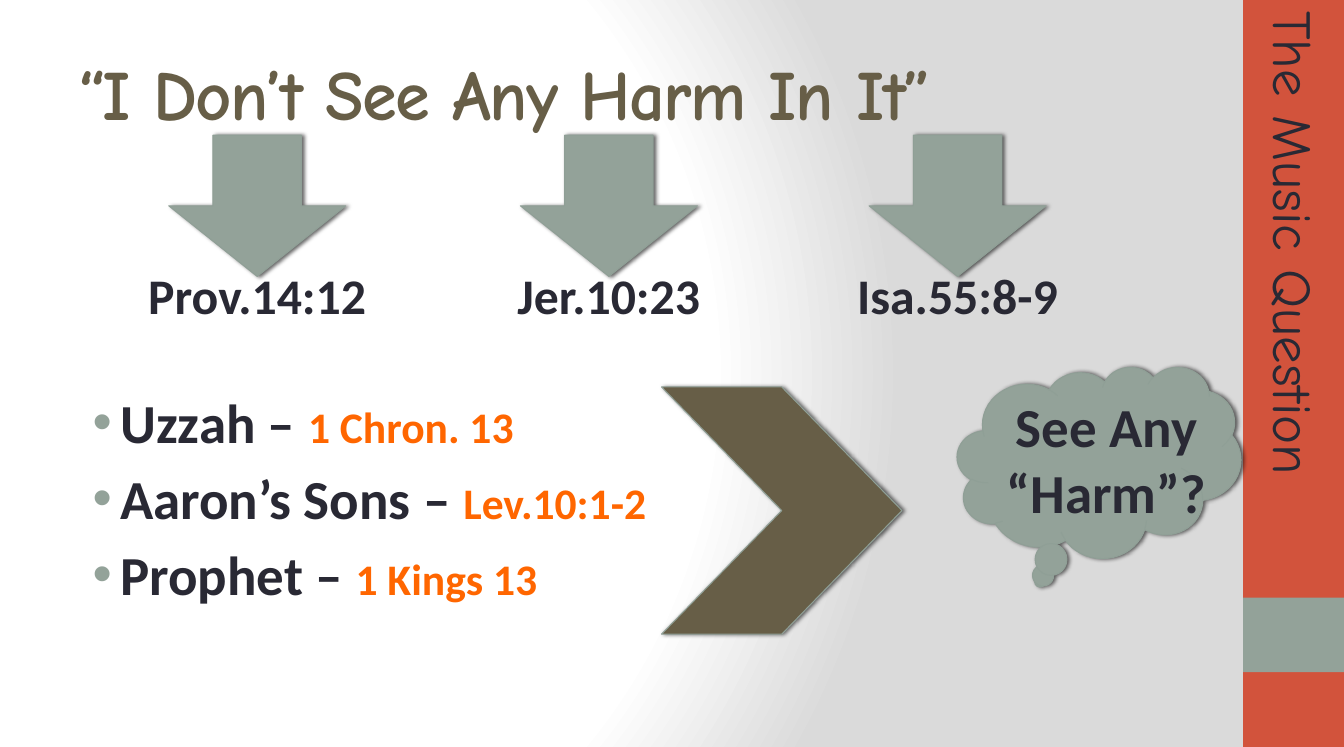
from lxml.etree import SubElement
from pptx import Presentation
from pptx.dml.color import RGBColor
from pptx.enum.shapes import MSO_SHAPE
from pptx.enum.text import MSO_ANCHOR, PP_ALIGN
from pptx.oxml import parse_xml
from pptx.oxml.ns import nsdecls, qn
from pptx.util import Inches, Pt

RED = RGBColor(0xD2, 0x53, 0x3C)
SAGE = RGBColor(0x93, 0xA2, 0x99)
EDGE = RGBColor(0x8F, 0x9F, 0x96)
OLIVE = RGBColor(0x67, 0x5E, 0x47)
INK = RGBColor(0x29, 0x29, 0x34)
ORANGE = RGBColor(0xFF, 0x66, 0x00)

BACK = f"""<p:bg {nsdecls("p", "a")}><p:bgPr><a:gradFill rotWithShape="1"><a:gsLst>
<a:gs pos="0"><a:srgbClr val="FFFFFF"/></a:gs>
<a:gs pos="75000"><a:srgbClr val="FFFFFF"/></a:gs>
<a:gs pos="100000"><a:srgbClr val="DADADA"/></a:gs></a:gsLst>
<a:path path="circle"><a:fillToRect l="20000" t="50000" r="100000" b="50000"/></a:path>
</a:gradFill><a:effectLst/></p:bgPr></p:bg>"""

SHADOW = f"""<a:effectLst {nsdecls("a")}>
<a:outerShdw blurRad="50800" dist="25400" dir="0" rotWithShape="0">
<a:srgbClr val="000000"><a:alpha val="60000"/></a:srgbClr></a:outerShdw></a:effectLst>"""


class Board:
    plain = "Calibri"
    comic = "Comic Neue"

    def __init__(self, deck):
        self.slide = deck.slides.add_slide(deck.slide_layouts[6])
        self.shapes = self.slide.shapes

    def back(self):
        self.slide.element.cSld.insert(0, parse_xml(BACK))

    def band(self, top, height, fill):
        return self.solid(MSO_SHAPE.RECTANGLE, (16.65, top, 1.35, height), fill)

    def solid(self, kind, area, fill):
        shape = self.shapes.add_shape(kind, *map(Inches, area))
        shape.shadow.inherit = False
        shape.fill.solid()
        shape.fill.fore_color.rgb = fill
        shape.line.fill.background()
        return shape

    def raised(self, kind, area, fill):
        shape = self.solid(kind, area, fill)
        shape.line.color.rgb = EDGE
        shape.line.width = Pt(1)
        props = shape.element.spPr
        props.replace(props.find(qn("a:effectLst")), parse_xml(SHADOW))

    def frame(self, area):
        box = self.shapes.add_textbox(*map(Inches, area))
        frame = box.text_frame
        frame.word_wrap = True
        frame.margin_left = frame.margin_right = Inches(0.15)
        frame.margin_top = frame.margin_bottom = Inches(0.07)
        return box, frame

    def style(self, font, size, color=INK, bold=True, name=plain):
        font.name = name
        font.size = Pt(size)
        font.bold = bold
        font.color.rgb = color

    def text(self, area, words, size, align=PP_ALIGN.CENTER, **look):
        box, frame = self.frame(area)
        para = frame.paragraphs[0]
        para.text = words
        para.alignment = align
        self.style(para.font, size, **look)
        return box

    def title(self, area, words):
        box = self.text(area, words, 68, PP_ALIGN.LEFT, color=OLIVE, name=self.comic)
        box.text_frame.vertical_anchor = MSO_ANCHOR.MIDDLE
        run = box.text_frame.paragraphs[0].runs[0]
        run.font.bold = True
        run.font._element.set("spc", "-150")

    def bullets(self, area, items):
        frame = self.frame(area)[1]
        for place, (name, verse) in enumerate(items):
            para = frame.add_paragraph() if place else frame.paragraphs[0]
            if place:
                para.space_before = Pt(9.5)
            props = para._p.get_or_add_pPr()
            props.set("marL", str(Inches(0.56)))
            props.set("indent", str(Inches(-0.37)))
            color = SubElement(props, qn("a:buClr"))
            SubElement(color, qn("a:srgbClr")).set("val", str(SAGE))
            SubElement(props, qn("a:buFont")).set("typeface", "Arial")
            SubElement(props, qn("a:buChar")).set("char", "•")
            for words, size, tint in ((f"{name} – ", 53, INK), (verse, 42, ORANGE)):
                run = para.add_run()
                run.text = words
                self.style(run.font, size, tint)


def main():
    deck = Presentation()
    deck.slide_width, deck.slide_height = Inches(18), Inches(10)
    board = Board(deck)
    board.back()
    board.band(0, 10, RED)
    board.band(8, 1, SAGE)
    board.title((0.9, 0.4, 15, 1.67), "“I Don’t See Any Harm In It”")

    verses = ((2.26, "Prov.14:12"), (6.97, "Jer.10:23"), (11.64, "Isa.55:8-9"))
    for left, verse in verses:
        board.raised(MSO_SHAPE.DOWN_ARROW, (left, 1.81, 2.37, 1.89), SAGE)
        board.text((left - 1.17, 3.48, 4.71, 0.96), verse, 48)

    board.bullets((0.9, 5.13, 8, 3.4), (
        ("Uzzah", "1 Chron. 13"),
        ("Aaron’s Sons", "Lev.10:1-2"),
        ("Prophet", "1 Kings 13"),
    ))
    board.raised(MSO_SHAPE.CHEVRON, (8.86, 5.18, 3.22, 3.31), OLIVE)
    board.raised(MSO_SHAPE.CLOUD_CALLOUT, (12.82, 4.91, 3.8, 2.56), SAGE)
    board.text((13.01, 5.18, 3.62, 1.93), "See Any “Harm”?", 53)
    side = board.text((13.34, 3.48, 8, 1.04), "The Music Question", 53,
                      PP_ALIGN.LEFT, bold=False, name=board.comic)
    side.rotation = 90
    deck.save("out.pptx")


if __name__ == "__main__":
    main()
